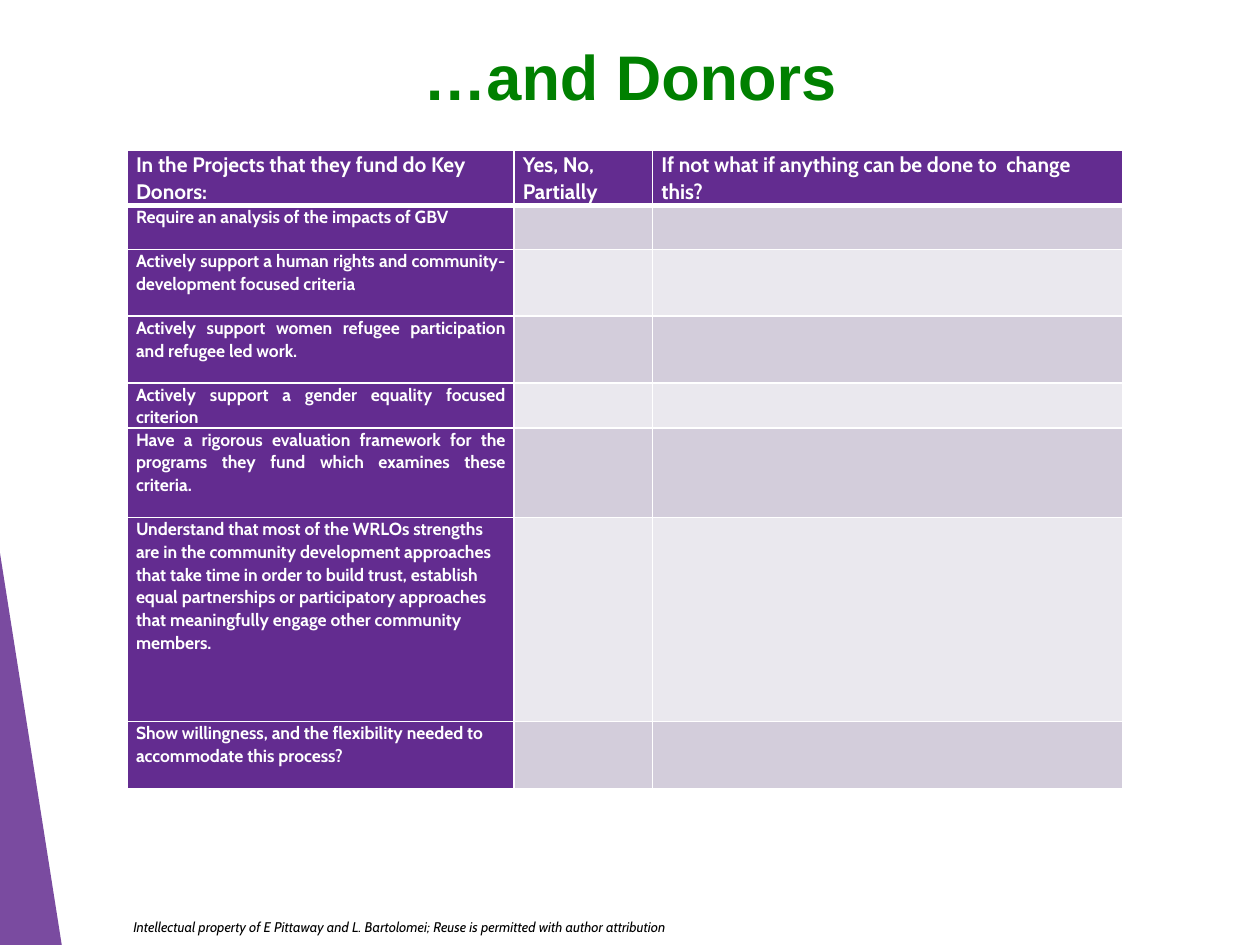
import lxml.etree
import pptx
import pptx.dml.color
import pptx.enum.text
import pptx.oxml.ns
import pptx.util

Inches = pptx.util.Inches
Pt = pptx.util.Pt
ALIGN = pptx.enum.text.PP_ALIGN
ANCHOR = pptx.enum.text.MSO_ANCHOR
qn = pptx.oxml.ns.qn

# Content
TITLE = "…and Donors"
FOOTER = ("Intellectual property of E Pittaway and L. Bartolomei; "
          "Reuse is permitted with author attribution")
HEADERS = [
    "In the Projects that they fund do Key Donors:",
    "Yes, No, Partially",
    "If not what if anything can be done to  change this?",
]
# Question, alignment, row height
QUESTIONS = [
    ("Require an analysis of the impacts of GBV", ALIGN.JUSTIFY, 0.35),
    ("Actively support a human rights and community-development focused criteria",
     ALIGN.JUSTIFY, 0.53),
    ("Actively support women refugee participation and refugee led work.",
     ALIGN.JUSTIFY, 0.53),
    ("Actively support a gender equality focused criterion", ALIGN.JUSTIFY, 0.35),
    ("Have a rigorous evaluation framework for the programs they fund which "
     "examines these criteria.", ALIGN.JUSTIFY, 0.71),
    ("Understand that most of the WRLOs strengths are in the community development "
     "approaches that take time in order to build trust, establish equal partnerships "
     "or participatory approaches that meaningfully engage other community members.",
     ALIGN.LEFT, 1.62),
    ("Show willingness, and the flexibility needed to accommodate this process?",
     ALIGN.LEFT, 0.53),
]
HEADER_HEIGHT = 0.44
COLUMN_WIDTHS = [3.07, 1.1, 3.73]
WEDGE = [(0, 4.39), (0.49, 7.5), (0, 7.5)]
COLORS = {
    "purple": "632C90",
    "band_dark": "D3CDDB",
    "band_light": "EAE8EE",
    "white": "FFFFFF",
    "black": "000000",
    "green": "008000",
}


def rgb(name):
    return pptx.dml.color.RGBColor.from_string(COLORS[name])


def add_run(paragraph, text, size, font_name, color, bold=False, italic=False):
    run = paragraph.add_run()
    run.text = text
    run.font.size = Pt(size)
    run.font.name = font_name
    run.font.bold = bold
    run.font.italic = italic
    run.font.color.rgb = rgb(color)


def set_borders(cell, top, bottom):
    properties = cell._tc.get_or_add_tcPr()
    widths = [("a:lnL", 1), ("a:lnR", 1), ("a:lnT", top), ("a:lnB", bottom)]
    for position, (tag, width) in enumerate(widths):
        line = lxml.etree.Element(qn(tag), w=str(Pt(width)))
        fill = lxml.etree.SubElement(line, qn("a:solidFill"))
        lxml.etree.SubElement(fill, qn("a:srgbClr"), val=COLORS["white"])
        properties.insert(position, line)


def format_cell(cell, fill, top=1, bottom=1):
    cell.margin_left = cell.margin_right = Inches(0.07)
    cell.margin_top = cell.margin_bottom = 0
    cell.fill.solid()
    cell.fill.fore_color.rgb = rgb(fill)
    set_borders(cell, top, bottom)


def write_cell(cell, text, size, alignment):
    paragraph = cell.text_frame.paragraphs[0]
    paragraph.alignment = alignment
    paragraph.line_spacing = 1.07
    paragraph.space_after = Pt(8)
    add_run(paragraph, text, size, "Cabin", "white", bold=True)


def add_wedge(slide):
    points = [(Inches(x), Inches(y)) for x, y in WEDGE]
    builder = slide.shapes.build_freeform(*points[0])
    builder.add_line_segments(points[1:], close=True)
    wedge = builder.convert_to_shape()
    wedge.shadow.inherit = False
    wedge.line.fill.background()
    wedge.fill.solid()
    wedge.fill.fore_color.rgb = rgb("purple")
    color = wedge._element.spPr.find(".//" + qn("a:srgbClr"))
    lxml.etree.SubElement(color, qn("a:alpha"), val="85000")


def add_footer(slide):
    box = slide.shapes.add_textbox(Inches(0.96), Inches(7.24), Inches(5.8), Inches(0.23))
    box.text_frame.word_wrap = True
    add_run(box.text_frame.paragraphs[0], FOOTER, 8, "Cabin", "black", italic=True)


def add_title(slide):
    title = slide.shapes.title
    title.left, title.top = Inches(0.74), Inches(0.25)
    title.width, title.height = Inches(8.52), Inches(0.69)
    title.text_frame.vertical_anchor = ANCHOR.MIDDLE
    paragraph = title.text_frame.paragraphs[0]
    paragraph.alignment = ALIGN.CENTER
    add_run(paragraph, TITLE, 36, "Arial", "green", bold=True)


def add_question_table(slide):
    heights = [HEADER_HEIGHT] + [height for _, _, height in QUESTIONS]
    table = slide.shapes.add_table(
        len(heights), len(COLUMN_WIDTHS), Inches(1.01), Inches(1.19),
        Inches(sum(COLUMN_WIDTHS)), Inches(sum(heights))).table
    for column, width in zip(table.columns, COLUMN_WIDTHS):
        column.width = Inches(width)
    for row, height in zip(table.rows, heights):
        row.height = Inches(height)

    # Header row, with a thick rule below
    for column, text in enumerate(HEADERS):
        cell = table.cell(0, column)
        format_cell(cell, "purple", bottom=3)
        write_cell(cell, text, 12, ALIGN.LEFT)

    # Questions, followed by empty answer cells in alternating bands
    for row, (question, alignment, _) in enumerate(QUESTIONS, start=1):
        top = 3 if row == 1 else 1
        band = "band_dark" if row % 2 else "band_light"
        format_cell(table.cell(row, 0), "purple", top=top)
        write_cell(table.cell(row, 0), question, 10, alignment)
        for column in range(1, len(COLUMN_WIDTHS)):
            cell = table.cell(row, column)
            format_cell(cell, band, top=top)
            # A small end mark lets the row keep its height
            paragraph = cell.text_frame.paragraphs[0]
            lxml.etree.SubElement(paragraph._p, qn("a:endParaRPr"), sz="1000")


def main():
    presentation = pptx.Presentation()
    presentation.slide_width = Inches(10)
    presentation.slide_height = Inches(7.5)
    slide = presentation.slides.add_slide(presentation.slide_layouts[5])
    add_wedge(slide)
    add_footer(slide)
    add_title(slide)
    add_question_table(slide)
    presentation.save("out.pptx")


if __name__ == "__main__":
    main()
